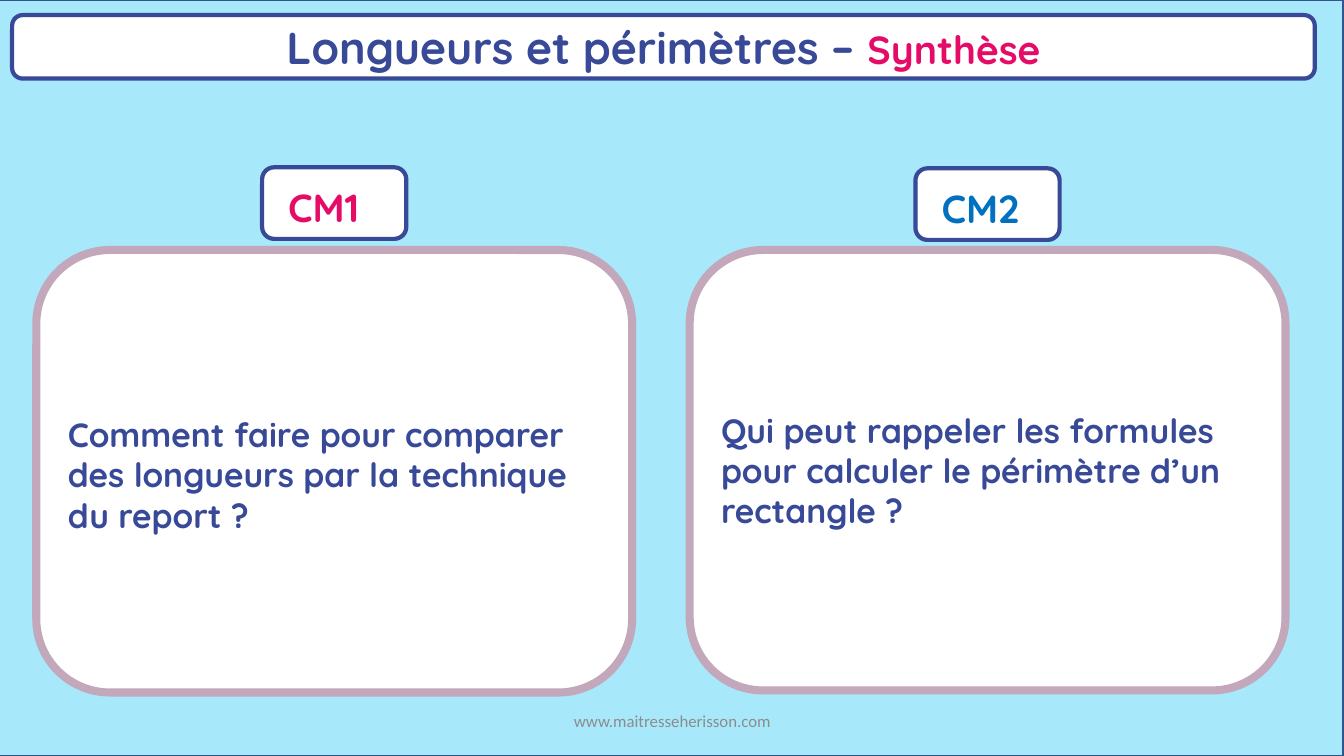
from dataclasses import dataclass

from pptx import Presentation
from pptx.dml.color import RGBColor
from pptx.enum.shapes import MSO_SHAPE
from pptx.enum.text import MSO_ANCHOR, PP_ALIGN
from pptx.shapes.autoshape import Shape
from pptx.slide import Slide
from pptx.util import Inches, Pt

RECT, ROUND = MSO_SHAPE.RECTANGLE, MSO_SHAPE.ROUNDED_RECTANGLE
TOP, MIDDLE = MSO_ANCHOR.TOP, MSO_ANCHOR.MIDDLE
LEFT, CENTER = PP_ALIGN.LEFT, PP_ALIGN.CENTER


@dataclass(frozen=True)
class Theme:
    """Colours, fonts and type sizes of the slide."""
    sky: str = "A7E8FB"
    edge: str = "325491"
    white: str = "FFFFFF"
    navy: str = "374997"
    mauve: str = "C3A7BA"
    pink: str = "E50C67"
    blue: str = "0070C0"
    gray: str = "8C8C8C"
    font: str = "Quicksand"
    plain: str = "Calibri"
    title: int = 32
    label: int = 28
    body: int = 24
    small: int = 12


@dataclass(frozen=True)
class Box:
    """A place on the slide, in inches."""
    left: float
    top: float
    width: float
    height: float


@dataclass(frozen=True)
class Level:
    """A class level: its tag, its colour and its question."""
    tag: str
    color: str
    query: str
    label: Box
    panel: Box
    inset: float


THEME = Theme()
LEVELS = (
    Level("CM1", THEME.pink,
          "Comment faire pour comparer des longueurs par la technique du report ?",
          Box(2.6, 1.66, 1.43, 0.71), Box(0.36, 2.48, 5.91, 4.39), 0.11),
    Level("CM2", THEME.blue,
          "Qui peut rappeler les formules pour calculer le périmètre d’un rectangle ?",
          Box(9.08, 1.67, 1.43, 0.71), Box(6.84, 2.48, 5.91, 4.37), 0.05),
)


def place(box: Box) -> tuple[Inches, Inches, Inches, Inches]:
    """Return the box as lengths."""
    return Inches(box.left), Inches(box.top), Inches(box.width), Inches(box.height)


def draw(slide: Slide, box: Box, line: str, width: float,
         kind: MSO_SHAPE = ROUND, fill: str = THEME.white) -> Shape:
    """Add a filled and outlined shape."""
    shape = slide.shapes.add_shape(kind, *place(box))
    shape.shadow.inherit = False
    shape.fill.solid()
    shape.fill.fore_color.rgb = RGBColor.from_string(fill)
    shape.line.color.rgb = RGBColor.from_string(line)
    shape.line.width = Pt(width)
    return shape


def write(shape: Shape, text: str, *, size: int, color: str = THEME.navy,
          font: str = THEME.font, bold: bool = True,
          align: PP_ALIGN = LEFT, anchor: MSO_ANCHOR = MIDDLE) -> None:
    """Add a formatted run to the first paragraph of a shape."""
    frame = shape.text_frame
    frame.word_wrap = True
    frame.vertical_anchor = anchor
    para = frame.paragraphs[0]
    para.alignment = align
    run = para.add_run()
    run.text = text
    run.font.name = font
    run.font.size = Pt(size)
    run.font.bold = bold
    run.font.color.rgb = RGBColor.from_string(color)


def show(slide: Slide, level: Level) -> None:
    """Draw the panel and the tag of one class level."""
    panel = draw(slide, level.panel, THEME.mauve, 5.75)
    panel.text_frame.margin_top = Inches(level.inset)
    write(panel, level.query, size=THEME.body)
    label = level.label
    draw(slide, label, THEME.navy, 3)
    spot = Box(label.left + 0.16, label.top + 0.11, 1.1, 0.57)
    tag = slide.shapes.add_textbox(*place(spot))
    write(tag, level.tag, size=THEME.label, color=level.color, anchor=TOP)


def main() -> None:
    """Build the slide and save it."""
    deck = Presentation()
    deck.slide_width, deck.slide_height = Inches(13.33), Inches(7.5)
    slide = deck.slides.add_slide(deck.slide_layouts[6])
    draw(slide, Box(-0.01, 0, 13.33, 7.5), THEME.edge, 1, RECT, THEME.sky)
    for level in LEVELS:
        show(slide, level)
    site = slide.shapes.add_textbox(*place(Box(4.42, 6.95, 4.5, 0.4)))
    write(site, "www.maitresseherisson.com", size=THEME.small, color=THEME.gray,
          font=THEME.plain, bold=False, align=CENTER)
    title = draw(slide, Box(0.12, 0.15, 12.92, 0.63), THEME.navy, 3)
    write(title, "Longueurs et périmètres – ", size=THEME.title, align=CENTER)
    write(title, "Synthèse", size=THEME.label, color=THEME.pink, align=CENTER)
    deck.save("out.pptx")


if __name__ == "__main__":
    main()
